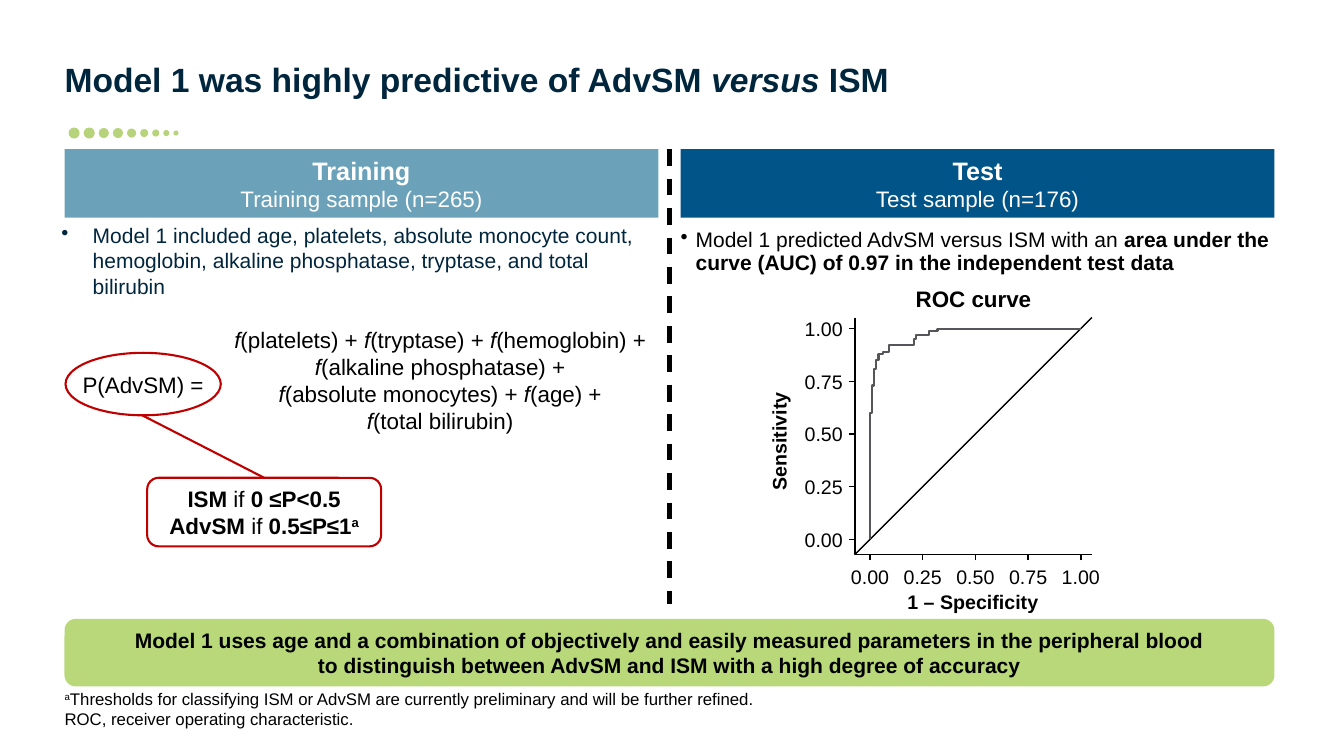
import pptx
import pptx.util
import pptx.dml.color
import pptx.enum.dml
import pptx.enum.shapes
import pptx.enum.text
from lxml import etree

Inches, Pt = pptx.util.Inches, pptx.util.Pt
KIND = pptx.enum.shapes.MSO_SHAPE
LINK = pptx.enum.shapes.MSO_CONNECTOR.STRAIGHT
ALIGN = pptx.enum.text.PP_ALIGN
ANCHOR = pptx.enum.text.MSO_ANCHOR

# Content: a box is a list of paragraphs, a paragraph a list of (text, style)
# Styles: b bold, i italic, s superscript
TITLE = [[("Model 1 was highly predictive of AdvSM ", "b"), ("versus", "bi"), (" ISM", "b")]]
HEADS = [("Training", "Training sample (n=265)", 0.64, "train"),
         ("Test", "Test sample (n=176)", 6.75, "test")]
INPUTS = [[("Model 1 included age, platelets, absolute monocyte count, hemoglobin, "
            "alkaline phosphatase, tryptase, and total bilirubin", "")]]
RESULT = [[("Model 1 predicted AdvSM versus ISM with an ", ""),
           ("area under the curve (AUC) of 0.97 in the independent test data", "b")]]
TERMS = ["(platelets) + ", "(tryptase) + ", "(hemoglobin) + ", "(alkaline phosphatase) +\n",
         "(absolute monocytes) + ", "(age) +\n", "(total bilirubin)"]
FORMULA = [[part for term in TERMS for part in (("f", "i"), (term, ""))]]
RULES = [[("ISM ", "b"), ("if", ""), (" 0 ≤P<0.5", "b")],
         [("AdvSM ", "b"), ("if", ""), (" 0.5≤P≤1", "b"), ("a", "bs")]]
BANNER = [[("Model 1 uses age and a combination of objectively and easily measured parameters "
            "in the peripheral blood\nto distinguish between AdvSM and ISM with a high degree "
            "of accuracy", "b")]]
NOTES = [[("a", "s"), ("Thresholds for classifying ISM or AdvSM are currently preliminary "
                       "and will be further refined.", "")],
         [("ROC, receiver operating characteristic.", "")]]
# Corners of the ROC curve: 1 – specificity, sensitivity
ROC = [(0, 0.6), (0.01, 0.73), (0.02, 0.81), (0.03, 0.85), (0.04, 0.88), (0.06, 0.89),
       (0.09, 0.92), (0.21, 0.95), (0.22, 0.97), (0.28, 0.99), (0.32, 1), (1, 1)]
TICKS = [0, 0.25, 0.5, 0.75, 1]
DOTS = [0.11, 0.11, 0.1, 0.1, 0.09, 0.08, 0.07, 0.06, 0.05]

THEME = {
    "font": "Arial",
    "color": {"ink": "000000", "navy": "00263D", "white": "FFFFFF", "train": "6BA2B9",
              "test": "005487", "lime": "B8D879", "dot": "B7D37C", "red": "C00000",
              "curve": "55555A"},
    "size": {"title": 24, "head": 18, "main": 16, "body": 15, "axis": 14, "note": 12},
}


def tint(name):
    return pptx.dml.color.RGBColor.from_string(THEME["color"][name])


def write(shape, paras, size="main", color="ink", align="CENTER", anchor="MIDDLE",
          inset=(0.1, 0.05, 0.1, 0.05), wrap=True, hang=0, lead=None):
    """Fill a shape with paragraphs; size is one name or one per paragraph."""
    frame = shape.text_frame
    frame.word_wrap = wrap
    frame.vertical_anchor = getattr(ANCHOR, anchor)
    (frame.margin_left, frame.margin_top,
     frame.margin_right, frame.margin_bottom) = map(Inches, inset)
    sizes = [size] * len(paras) if isinstance(size, str) else size
    for i, (runs, name) in enumerate(zip(paras, sizes)):
        para = frame.paragraphs[0] if i == 0 else frame.add_paragraph()
        para.alignment = getattr(ALIGN, align)
        if hang:
            props = para._p.get_or_add_pPr()
            props.set("marL", str(Inches(hang)))
            props.set("indent", str(-Inches(hang)))
            bullet = etree.SubElement(props, pptx.oxml.ns.qn("a:buChar"))
            bullet.set("char", "•")
        if lead:
            para.line_spacing = lead
        for text, style in runs:
            for j, piece in enumerate(text.split("\n")):
                if j:
                    para.add_line_break()
                if not piece:
                    continue
                run = para.add_run()
                run.text = piece
                font = run.font
                font.name, font.size = THEME["font"], Pt(THEME["size"][name])
                font.bold, font.italic = "b" in style, "i" in style
                font.color.rgb = tint(color)
                if "s" in style:
                    run._r.get_or_add_rPr().set("baseline", "30000")


def label(on, box, paras, **format):
    shape = on.add_textbox(*map(Inches, box))
    write(shape, paras, **format)
    return shape


def paint(shape, fill=None, line=None, width=1.5):
    shape.shadow.inherit = False
    if fill:
        shape.fill.solid()
        shape.fill.fore_color.rgb = tint(fill)
    else:
        shape.fill.background()
    if line:
        shape.line.color.rgb = tint(line)
        shape.line.width = Pt(width)
    else:
        shape.line.fill.background()
    return shape


def block(on, kind, box, **look):
    return paint(on.add_shape(kind, *map(Inches, box)), **look)


def rule(on, start, end, color="ink", width=1):
    line = on.add_connector(LINK, *map(Inches, start + end))
    line.line.color.rgb = tint(color)
    line.line.width = Pt(width)
    etree.SubElement(line._element.spPr, pptx.oxml.ns.qn("a:effectLst"))
    return line


def trace(on, points, **look):
    spots = [(Inches(x), Inches(y)) for x, y in points]
    pen = on.build_freeform(*spots[0])
    pen.add_line_segments(spots[1:], close=False)
    return paint(pen.convert_to_shape(), **look)


deck = pptx.Presentation()
deck.slide_width, deck.slide_height = Inches(13.33), Inches(7.5)
page = deck.slides.add_slide(deck.slide_layouts[6]).shapes

# Title and row of shrinking dots
label(page, (0.64, 0.33, 10.84, 0.73), TITLE, size="title", color="navy", align="LEFT",
      anchor="BOTTOM", inset=(0, 0.04, 0, 0.08))
dots = page.add_group_shape().shapes
left = 0.68
for size in DOTS:
    block(dots, KIND.OVAL, (left, 1.32 - size / 2, size, size), fill="dot")
    left += size + 0.04

# Column heads and divider
for head, sample, left, fill in HEADS:
    bar = block(page, KIND.RECTANGLE, (left, 1.48, 5.89, 0.68), fill=fill)
    write(bar, [[(head, "b")], [(sample, "")]], size=("head", "main"), color="white")
rule(page, (6.64, 1.48), (6.64, 5.99), width=3).line.dash_style = \
    pptx.enum.dml.MSO_LINE.DASH

# Training column
label(page, (0.61, 2.08, 5.78, 0.88), INPUTS, size="body", color="navy", align="LEFT",
      anchor="BOTTOM", inset=(0, 0.12, 0, 0), hang=0.31)
label(page, (2.17, 3.18, 4.39, 1.18), FORMULA)
chance = block(page, KIND.OVAL, (0.65, 3.5, 1.54, 0.62), line="red")
write(chance, [[("P(AdvSM) =", "")]], wrap=False)
cutoff = block(page, KIND.ROUNDED_RECTANGLE, (1.46, 4.74, 2.32, 0.68), fill="white", line="red")
write(cutoff, RULES)
rule(page, (1.41, 4.12), (2.62, 4.74), color="red", width=1.5).end_connect(cutoff, 0)

# Test column
label(page, (6.75, 2.16, 5.89, 0.62), RESULT, size="body", align="LEFT", anchor="TOP",
      inset=(0, 0.12, 0, 0.05), hang=0.15, lead=0.9)
label(page, (8.48, 2.81, 2.35, 0.34), [[("ROC curve", "b")]], anchor="TOP", lead=0.9)

# ROC plot
plot = page.add_group_shape().shapes
LEFT, TOP, SIDE = 8.48, 3.15, 2.35
BASE, SPAN, PAD, TICK = TOP + SIDE, 2.09, 0.15, 0.06


def spot(x, y):
    return LEFT + PAD + SPAN * x, BASE - PAD - SPAN * y


trace(plot, [(LEFT, TOP), (LEFT, BASE), (LEFT + SIDE, BASE)], line="ink", width=1)
for value in TICKS:
    x, y = spot(value, value)
    mark = [[(f"{value:.2f}", "")]]
    rule(plot, (LEFT - TICK, y), (LEFT, y))
    rule(plot, (x, BASE + TICK), (x, BASE))
    label(plot, (LEFT - 0.6, y - 0.12, 0.6, 0.24), mark, size="axis", align="RIGHT",
          inset=(0, 0, 0.12, 0))
    label(plot, (x - 0.25, BASE, 0.5, 0.33), mark, size="axis", anchor="TOP",
          inset=(0, 0.1, 0, 0))
label(plot, (8.47, 5.85, 2.36, 0.24), [[("1 – Specificity", "b")]], size="axis",
      anchor="TOP", inset=(0, 0, 0, 0))
label(plot, (6.6, 4.21, 2.24, 0.34), [[("Sensitivity", "b")]], size="axis",
      anchor="BOTTOM").rotation = 270
rule(plot, (LEFT, BASE), (LEFT + SIDE, TOP))
steps, high = [(0, 0)], 0
for x, y in ROC:
    steps += [(x, high), (x, y)]
    high = y
trace(plot, [spot(x, y) for x, y in steps], line="curve")

# Conclusion and footnotes
banner = block(page, KIND.ROUNDED_RECTANGLE, (0.64, 6.14, 12, 0.67), fill="lime")
write(banner, BANNER, size="body")
label(page, (0.64, 6.78, 11.41, 0.5), NOTES, size="note", align="LEFT", anchor="BOTTOM",
      inset=(0, 0.05, 0, 0.05))

deck.save("out.pptx")
